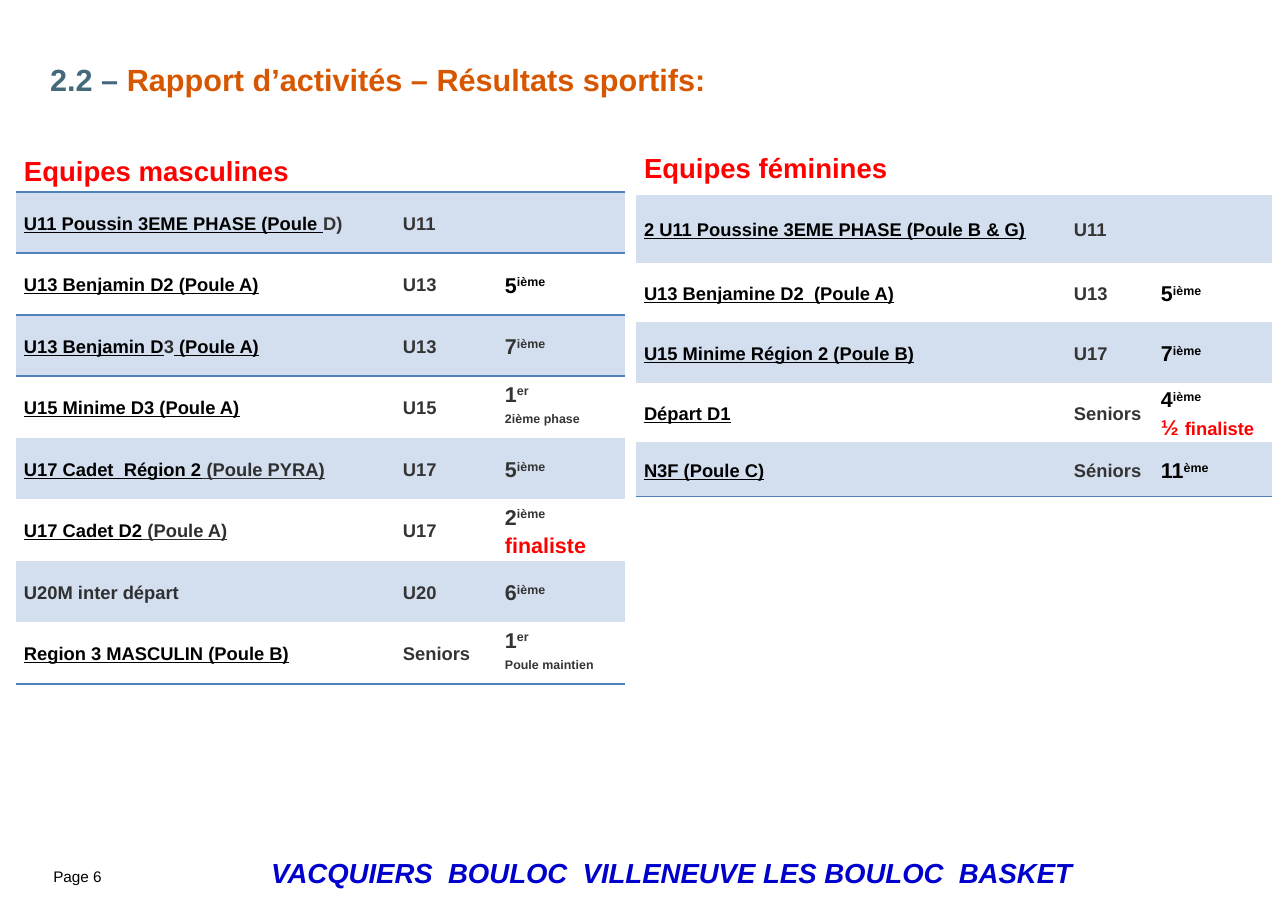
"""Build the sports results slide with one table for the men's teams and one for the women's."""
from dataclasses import dataclass, replace

from lxml.etree import SubElement
from pptx import Presentation
from pptx.dml.color import RGBColor
from pptx.enum.text import MSO_ANCHOR, MSO_AUTO_SIZE, PP_ALIGN
from pptx.oxml.ns import qn
from pptx.util import Emu, Pt

EMU_PER_PX = 8298


@dataclass(frozen=True)
class Style:
    """Look of a piece of text."""
    size: int
    color: str
    bold: bool = True
    italic: bool = False
    underline: bool = False
    raised: bool = False


@dataclass(frozen=True)
class Theme:
    """Colours and type styles of the slide."""
    font: str = "Arial"
    band: str = "D3DFEE"
    rule: str = "4F81BD"
    no_grid: str = "{2D5ABB26-0587-4C30-8999-92F81FD0307C}"
    number: Style = Style(20, "44697D")
    title: Style = Style(20, "D65700")
    heading: Style = Style(18, "FF0000")
    team: Style = Style(12, "000000", underline=True)
    pool: Style = Style(12, "2F2F2F", underline=True)
    plain: Style = Style(12, "2F2F2F")
    category: Style = Style(12, "343434")
    rank: Style = Style(14, "343434")
    black_rank: Style = Style(14, "000000")
    final: Style = Style(14, "FF0000")
    small_final: Style = Style(12, "FF0000")
    club: Style = Style(18, "0000CC", italic=True)
    page: Style = Style(10, "000000", bold=False)


THEME = Theme()


class SlideBuilder:
    """Draw styled elements on the current slide."""

    def __init__(self, slide, theme):
        self.slide = slide
        self.theme = theme

    def px(self, *lengths):
        """Turn pixels into EMU."""
        return [Emu(length * EMU_PER_PX) for length in lengths]

    def format_font(self, font, style):
        """Apply a style to a font."""
        font.name = self.theme.font
        font.size = Pt(style.size)
        font.bold = style.bold
        font.italic = style.italic
        font.underline = style.underline
        font.color.rgb = RGBColor.from_string(style.color)
        if style.raised:
            font._element.set("baseline", "30000")

    def fill_text(self, frame, lines, spacing=1.0, align=PP_ALIGN.LEFT):
        """Fill a text frame with lines made of (text, style) spans."""
        for index, line in enumerate(lines):
            para = frame.add_paragraph() if index else frame.paragraphs[0]
            para.line_spacing = spacing
            para.alignment = align
            uniform = len({style for _, style in line}) == 1
            if uniform:
                self.format_font(para.font, line[0][1])
            for text, style in line:
                span = para.add_run()
                span.text = text
                if not uniform:
                    self.format_font(span.font, style)

    def set_frame(self, frame):
        """Remove margins and centre the text vertically."""
        frame.margin_left = frame.margin_right = frame.margin_top = frame.margin_bottom = 0
        frame.vertical_anchor = MSO_ANCHOR.MIDDLE
        frame.word_wrap = True
        frame.auto_size = MSO_AUTO_SIZE.NONE

    def title(self, place, line):
        """Move and fill the title placeholder."""
        box = self.slide.shapes.title
        box.left, box.top, box.width, box.height = self.px(*place)
        self.set_frame(box.text_frame)
        self.fill_text(box.text_frame, [line], 0.95)

    def text(self, place, text, style):
        """Add a centred text box."""
        box = self.slide.shapes.add_textbox(*self.px(*place))
        self.set_frame(box.text_frame)
        self.fill_text(box.text_frame, [[(text, style)]], align=PP_ALIGN.CENTER)

    def border(self, cell, side):
        """Draw a rule on one side of a cell."""
        line = SubElement(cell._tc.get_or_add_tcPr(), qn(f"a:ln{side}"), w=str(Pt(1)))
        fill = SubElement(line, qn("a:solidFill"))
        SubElement(fill, qn("a:srgbClr"), val=self.theme.rule)

    def table(self, left, top, widths, heights, heading, rows, ruled):
        """Add a banded table with rules under the given rows."""
        place = self.px(left, top, sum(widths), sum(heights))
        frame = self.slide.shapes.add_table(len(heights), len(widths), *place)
        table = frame.table
        table.horz_banding = table.first_row = False
        table._tbl.tblPr.find(qn("a:tableStyleId")).text = self.theme.no_grid
        for column, width in zip(table.columns, self.px(*widths)):
            column.width = width
        for row, height in zip(table.rows, self.px(*heights)):
            row.height = height
        contents = [([[(heading, self.theme.heading)]], [], []), *rows]
        for number, content in enumerate(contents):
            for position, lines in enumerate(content):
                cell = table.cell(number, position)
                cell.margin_left, cell.margin_right = self.px(8, 8)
                cell.margin_top = cell.margin_bottom = 0
                cell.vertical_anchor = MSO_ANCHOR.MIDDLE
                if number - 1 in ruled:
                    self.border(cell, "T")
                if number in ruled:
                    self.border(cell, "B")
                if number % 2:
                    cell.fill.solid()
                    cell.fill.fore_color.rgb = RGBColor.from_string(self.theme.band)
                else:
                    cell.fill.background()
                self.fill_text(cell.text_frame, lines, 1.15)
        table.cell(0, 0).merge(table.cell(0, 1))


def team(name, pool="", pool_style=THEME.pool, ending=""):
    """Return the spans of a team name."""
    spans = [(name, THEME.team), (pool, pool_style), (ending, THEME.team)]
    return [[span for span in spans if span[0]]]


def category(name):
    """Return the spans of an age category."""
    return [[(name, THEME.category)]]


def rank(number, suffix="ième", style=THEME.rank, *notes):
    """Return a rank with a raised suffix and an optional line of notes."""
    first = [(number, style), (suffix, replace(style, raised=True))]
    return [first, list(notes)] if notes else [first]


def main():
    """Build and save the deck."""
    deck = Presentation()
    deck.slide_width, deck.slide_height = Emu(1288 * EMU_PER_PX), Emu(911 * EMU_PER_PX)
    page = SlideBuilder(deck.slides.add_slide(deck.slide_layouts[5]), THEME)
    note = replace(THEME.rank, raised=True)
    black = THEME.black_rank

    men = [
        (team("U11 Poussin 3EME PHASE (Poule ", "D)", THEME.category), category("U11"), []),
        (team("U13 Benjamin D2 (Poule A)"), category("U13"), rank("5", style=black)),
        (team("U13 Benjamin D", "3", THEME.plain, " (Poule A)"), category("U13"), rank("7")),
        (team("U15 Minime D3 (Poule A)"), category("U15"),
         rank("1", "er", THEME.rank, ("2ième phase", note))),
        (team("U17 Cadet  Région 2", " (Poule PYRA)"), category("U17"), rank("5")),
        (team("U17 Cadet D2", " (Poule A)"), category("U17"),
         rank("2", "ième", THEME.rank, ("finaliste", THEME.final))),
        (team("", "U20M inter départ", THEME.plain), category("U20"), rank("6")),
        (team("Region 3 MASCULIN (Poule B)"), category("Seniors"),
         rank("1", "er", THEME.rank, ("Poule maintien", note))),
    ]
    women = [
        (team("2 U11 Poussine 3EME PHASE (Poule B & G)"), category("U11"), []),
        (team("U13 Benjamine D2  (Poule A)"), category("U13"), rank("5", style=black)),
        (team("U15 Minime Région 2 (Poule B)"), category("U17"), rank("7", style=black)),
        (team("Départ D1"), category("Seniors"),
         rank("4", "ième", black, ("½ ", THEME.final), ("finaliste", THEME.small_final))),
        (team("N3F (Poule C)"), category("Séniors"), rank("11", "ème", black)),
    ]

    page.title((50, 51, 1188, 61), [
        ("2.2 – ", THEME.number), ("Rapport d’activités – Résultats sportifs:", THEME.title)])
    page.table(16, 148, (379, 102, 128), [44] + [61, 62] * 4, "Equipes masculines", men, (0, 1, 2, 8))
    page.table(636, 138, (430, 87, 119), (57, 68, 59, 61, 59, 55), "Equipes féminines", women, (5,))
    page.text((105, 856, 1134, 33), "VACQUIERS  BOULOC  VILLENEUVE LES BOULOC  BASKET", THEME.club)
    page.text((50, 862, 55, 29), "Page 6", THEME.page)
    deck.save("out.pptx")


if __name__ == "__main__":
    main()
